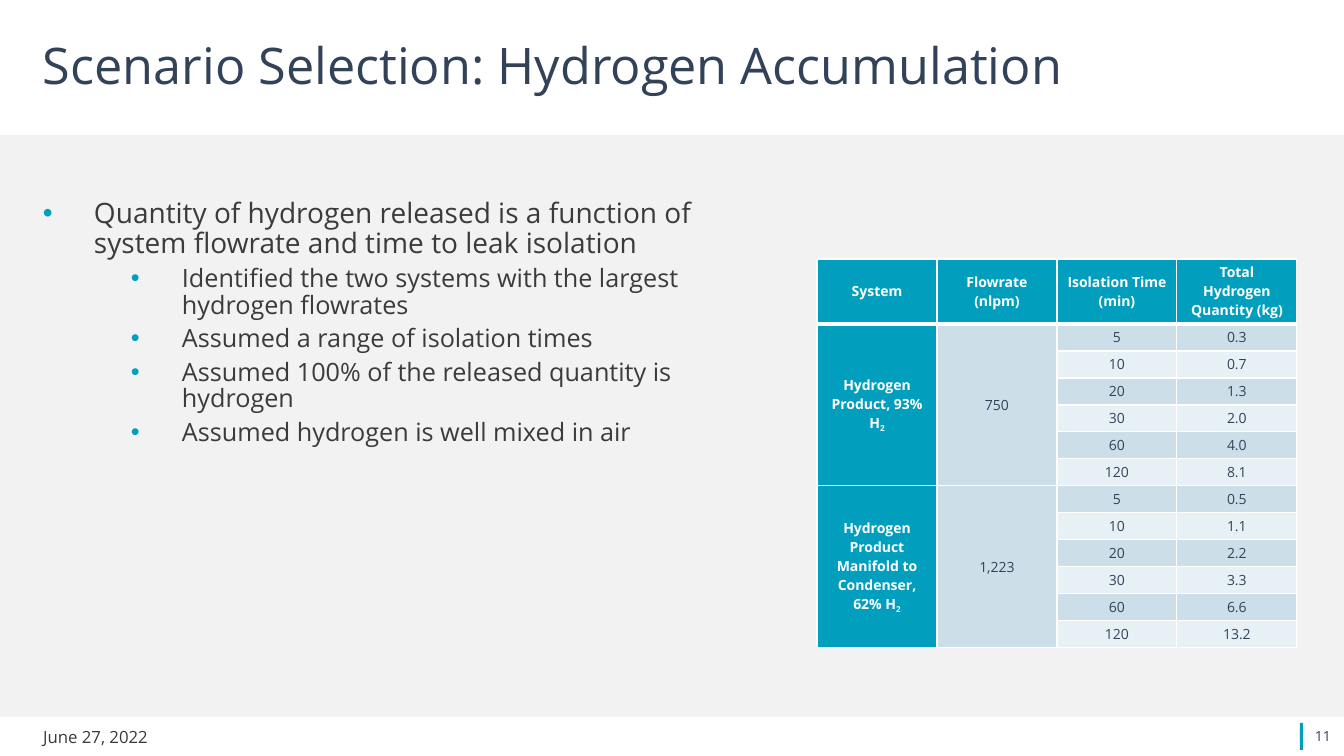
from pptx import Presentation
from pptx.dml.color import RGBColor
from pptx.enum.shapes import MSO_SHAPE as Shape
from pptx.enum.text import MSO_ANCHOR as Anchor, PP_ALIGN as Align
from pptx.oxml.ns import qn
from pptx.util import Pt
from lxml.etree import SubElement

EMU_PER_PX = 12192000 / 1344
FONT = "Open Sans"
TEAL, NAVY, CHARCOAL = "029EBE", "324259", "3A3B3A"
WHITE, PANEL_GRAY = "FFFFFF", "F2F2F2"
BANDS = ["CCDFE8", "E7F0F4"]

BULLETS = [
    (0, "Quantity of hydrogen released is a function of system flowrate and time to leak isolation"),
    (1, "Identified the two systems with the largest hydrogen flowrates"),
    (1, "Assumed a range of isolation times"),
    (1, "Assumed 100% of the released quantity is hydrogen"),
    (1, "Assumed hydrogen is well mixed in air"),
]
HEADERS = ["System", "Flowrate (nlpm)", "Isolation Time (min)", "Total Hydrogen Quantity (kg)"]
TIMES = ["5", "10", "20", "30", "60", "120"]
SYSTEMS = [
    ("Hydrogen Product, 93% H", "750", ["0.3", "0.7", "1.3", "2.0", "4.0", "8.1"]),
    ("Hydrogen Product Manifold to Condenser, 62% H", "1,223",
     ["0.5", "1.1", "2.2", "3.3", "6.6", "13.2"]),
]


def px(length):
    return round(length * EMU_PER_PX)


def color(hex_code):
    return RGBColor.from_string(hex_code)


def write(paragraph, text, size=10, hex_code=NAVY, bold=False, align=Align.LEFT,
          line_spacing=None, subscript=""):
    paragraph.alignment = align
    if line_spacing:
        paragraph.line_spacing = line_spacing
    for part in filter(None, (text, subscript)):
        run = paragraph.add_run()
        run.text = part
        run.font.name, run.font.size, run.font.bold = FONT, Pt(size), bold
        run.font.color.rgb = color(hex_code)
    if subscript:
        run.font._element.set("baseline", "-25000")


def add_rectangle(slide, left, top, width, height, hex_code):
    shape = slide.shapes.add_shape(Shape.RECTANGLE, px(left), px(top), px(width), px(height))
    shape.shadow.inherit = False
    shape.fill.solid()
    shape.fill.fore_color.rgb = color(hex_code)
    shape.line.fill.background()


def add_box(slide, left, top, width, height, anchor=Anchor.MIDDLE):
    frame = slide.shapes.add_textbox(px(left), px(top), px(width), px(height)).text_frame
    frame.word_wrap = True
    frame.vertical_anchor = anchor
    frame.margin_left = frame.margin_top = frame.margin_right = frame.margin_bottom = 0
    return frame


def add_bullets(slide):
    frame = add_box(slide, 43, 200, 734, 488, Anchor.TOP)
    for index, (level, text) in enumerate(BULLETS):
        paragraph = frame.add_paragraph() if index else frame.paragraphs[0]
        paragraph.level = level
        if index:
            paragraph.space_before = Pt(5)
        write(paragraph, text, size=20 - 2 * level, hex_code=CHARCOAL, line_spacing=0.88)
        properties = paragraph._p.get_or_add_pPr()
        properties.set("marL", str(px(139 if level else 51)))
        properties.set("indent", str(px(-51)))
        bullet_color = SubElement(properties, qn("a:buClr"))
        SubElement(bullet_color, qn("a:srgbClr"), val=TEAL)
        SubElement(properties, qn("a:buFont"), typeface="Arial")
        SubElement(properties, qn("a:buChar"), char="•")


def style_cell(cell, fill, bottom=1):
    cell.margin_left = cell.margin_right = px(8)
    cell.margin_top = cell.margin_bottom = px(4)
    cell.vertical_anchor = Anchor.MIDDLE
    properties = cell._tc.get_or_add_tcPr()
    for side, width in (("L", 1), ("R", 1), ("T", 1), ("B", bottom)):
        border = SubElement(properties, qn(f"a:ln{side}"), w=str(Pt(width)))
        SubElement(SubElement(border, qn("a:solidFill")), qn("a:srgbClr"), val=WHITE)
    cell.fill.solid()
    cell.fill.fore_color.rgb = color(fill)


def fill_cell(cell, text, **text_format):
    write(cell.text_frame.paragraphs[0], text, align=Align.CENTER, **text_format)


def add_flow_table(slide):
    row_count, column_count = 1 + len(SYSTEMS) * len(TIMES), len(HEADERS)
    header_height, row_height, column_width = 65, 27, 120
    table = slide.shapes.add_table(
        row_count, column_count, px(817), px(259), px(column_count * column_width),
        px(header_height + (row_count - 1) * row_height)).table
    for column in table.columns:
        column.width = px(column_width)
    for index, row in enumerate(table.rows):
        row.height = px(row_height if index else header_height)

    # Header row
    for column, header in enumerate(HEADERS):
        cell = table.cell(0, column)
        style_cell(cell, TEAL, bottom=3)
        fill_cell(cell, header, hex_code=WHITE, bold=True)

    # One block of rows per system
    for block, (system, flowrate, quantities) in enumerate(SYSTEMS):
        first = 1 + block * len(TIMES)
        for offset, (time, quantity) in enumerate(zip(TIMES, quantities)):
            band = BANDS[offset % 2]
            for column, fill in enumerate((TEAL, BANDS[0], band, band)):
                style_cell(table.cell(first + offset, column), fill)
            fill_cell(table.cell(first + offset, 2), time)
            fill_cell(table.cell(first + offset, 3), quantity)
        for column in (0, 1):
            table.cell(first, column).merge(table.cell(first + len(TIMES) - 1, column))
        fill_cell(table.cell(first, 0), system, hex_code=WHITE, bold=True, subscript="2")
        fill_cell(table.cell(first, 1), flowrate)


def main():
    presentation = Presentation()
    presentation.slide_width, presentation.slide_height = px(1344), px(756)
    slide = presentation.slides.add_slide(presentation.slide_layouts[6])

    # Background panel and footer accent
    add_rectangle(slide, 0, 135, 1344, 582, PANEL_GRAY)
    add_rectangle(slide, 1300, 723, 3, 27, TEAL)

    # Title and content
    title = add_box(slide, 43, 15, 1260, 107)
    write(title.paragraphs[0], "Scenario Selection: Hydrogen Accumulation",
          size=36, line_spacing=0.9)
    add_bullets(slide)
    add_flow_table(slide)

    # Footer
    date = add_box(slide, 43, 717, 313, 40)
    write(date.paragraphs[0], "June 27, 2022", size=12, hex_code=CHARCOAL)
    page_number = add_box(slide, 1303, 716, 40, 40)
    write(page_number.paragraphs[0], "11", align=Align.CENTER)

    presentation.save("out.pptx")


if __name__ == "__main__":
    main()
